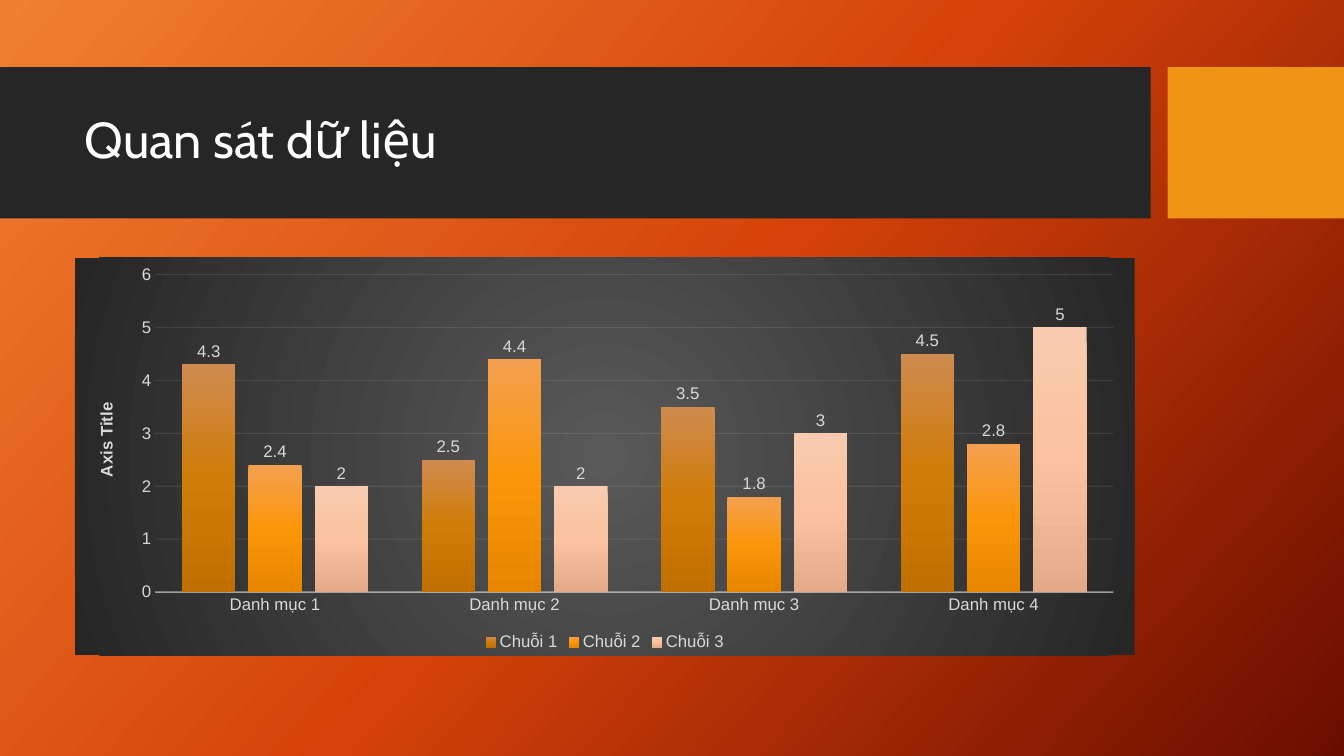
from lxml.etree import SubElement
from pptx import Presentation
from pptx.chart.data import CategoryChartData
from pptx.dml.color import RGBColor
from pptx.enum.chart import XL_CHART_TYPE as ChartType
from pptx.enum.chart import XL_LABEL_POSITION as LabelPosition
from pptx.enum.chart import XL_LEGEND_POSITION as LegendPosition
from pptx.enum.chart import XL_TICK_MARK as TickMark
from pptx.enum.shapes import MSO_SHAPE as Shape
from pptx.enum.text import MSO_ANCHOR as Anchor
from pptx.oxml import parse_xml
from pptx.oxml.ns import nsdecls, qn
from pptx.util import Pt

PAGE_WIDTH, PAGE_HEIGHT = 960, 540
LIGHT_GREY = "D9D9D9"
CATEGORIES = ["Danh mục 1", "Danh mục 2", "Danh mục 3", "Danh mục 4"]
SERIES = [
    ("Chuỗi 1", (4.3, 2.5, 3.5, 4.5), ("CE8B4F", "D07C08", "C07000")),
    ("Chuỗi 2", (2.4, 4.4, 1.8, 2.8), ("F4A050", "FB960A", "E88600")),
    ("Chuỗi 3", (2, 2, 3, 5), ("F8CBB0", "FAC29E", "E3AB87")),
]


def color(value):
    return RGBColor.from_string(value)


def gradient(colors, angle=None):
    step = 100000 // (len(colors) - 1)
    stops = "".join(
        f'<a:gs pos="{index * step}"><a:srgbClr val="{value}"/></a:gs>'
        for index, value in enumerate(colors)
    )
    if angle is None:
        shade = (
            '<a:path path="circle"><a:fillToRect l="50000" t="50000" '
            'r="50000" b="50000"/></a:path>'
        )
    else:
        shade = f'<a:lin ang="{angle * 60000}" scaled="0"/>'
    return parse_xml(
        f'<a:gradFill {nsdecls("a")} rotWithShape="1">'
        f"<a:gsLst>{stops}</a:gsLst>{shade}</a:gradFill>"
    )


def replace_fill(properties, fill):
    properties.replace(properties.find(qn("a:solidFill")), fill)


def style_font(font, size=12, name="Arial", fill=LIGHT_GREY, bold=False):
    font.size = Pt(size)
    font.name = name
    font.bold = bold
    font.color.rgb = color(fill)


def write_text(frame, text, line_spacing=None, **font_format):
    para = frame.paragraphs[0]
    if line_spacing:
        para.line_spacing = line_spacing
    span = para.add_run()
    span.text = text
    style_font(span.font, **font_format)


def style_line(line, width, opacity):
    line.width = Pt(width)
    line.color.rgb = color("F2F2F2")
    tint = line.fill._xPr.find(qn("a:solidFill"))[0]
    SubElement(tint, qn("a:alpha")).set("val", str(opacity * 1000))


def add_block(page, left, top, width, height, fill):
    block = page.shapes.add_shape(
        Shape.RECTANGLE, Pt(left), Pt(top), Pt(width), Pt(height)
    )
    block.shadow.inherit = False
    block.fill.solid()
    block.fill.fore_color.rgb = color(fill)
    block.line.fill.background()


def add_background(page):
    page.background.fill.solid()
    properties = page._element.xpath("p:cSld/p:bg/p:bgPr")[0]
    replace_fill(properties, gradient(("F18031", "D54209", "6A0D00"), 42))


def add_header(page, top, height):
    accent_width, gap = 126, 12
    band_width = PAGE_WIDTH - accent_width - gap
    add_block(page, 0, top, band_width, height, "262626")
    add_block(page, PAGE_WIDTH - accent_width, top, accent_width, height, "F09415")
    box = page.shapes.add_textbox(
        Pt(53.5), Pt(top + 11), Pt(757), Pt(height - 23)
    )
    frame = box.text_frame
    frame.word_wrap = True
    frame.vertical_anchor = Anchor.MIDDLE
    write_text(
        frame, "Quan sát dữ liệu", line_spacing=0.9,
        size=36, name="Cabin", fill="FFFFFF",
    )


def style_axes(chart):
    for axis in (chart.category_axis, chart.value_axis):
        axis.major_tick_mark = axis.minor_tick_mark = TickMark.NONE
        style_font(axis.tick_labels.font)
    chart.category_axis.has_major_gridlines = False
    style_line(chart.category_axis.format.line, 1, 54)

    values = chart.value_axis
    values.minimum_scale, values.maximum_scale, values.major_unit = 0, 6, 1
    values.format.line.fill.background()
    style_line(values.major_gridlines.format.line, 0.75, 10)
    title = values.axis_title
    write_text(title.text_frame, "Axis Title", bold=True)
    body = title._element.xpath(".//a:bodyPr")[0]
    body.set("rot", "-5400000")
    body.set("vert", "horz")


def add_column_chart(page, left, top, width, height):
    chart_data = CategoryChartData()
    chart_data.categories = CATEGORIES
    for name, values, _ in SERIES:
        chart_data.add_series(name, values)
    chart = page.shapes.add_chart(
        ChartType.COLUMN_CLUSTERED,
        Pt(left), Pt(top), Pt(width), Pt(height), chart_data,
    ).chart
    style_font(chart.font, size=10, fill="FFFFFF")
    chart.has_title = False
    chart.has_legend = True
    chart.legend.position = LegendPosition.BOTTOM
    chart.legend.include_in_layout = False
    style_font(chart.legend.font)
    style_axes(chart)

    plot = chart.plots[0]
    plot.gap_width, plot.overlap = 100, -24
    plot.vary_by_categories = False
    for series, (_, _, colors) in zip(plot.series, SERIES):
        series.format.fill.solid()
        replace_fill(series._element.find(qn("c:spPr")), gradient(colors, 90))
        labels = series.data_labels
        labels.show_value = True
        labels.position = LabelPosition.OUTSIDE_END
        style_font(labels.font)

    frame_style = parse_xml(
        f'<c:spPr {nsdecls("c", "a")}><a:ln><a:noFill/></a:ln></c:spPr>'
    )
    frame_style.insert(0, gradient(("595959", "262626")))
    chart._chartSpace.find(qn("c:chart")).addnext(frame_style)


def main():
    deck = Presentation()
    deck.slide_width, deck.slide_height = Pt(PAGE_WIDTH), Pt(PAGE_HEIGHT)
    page = deck.slides.add_slide(deck.slide_layouts[6])
    add_background(page)
    add_header(page, top=48, height=108)
    add_column_chart(page, left=53.5, top=184, width=757, height=284)
    deck.save("out.pptx")


if __name__ == "__main__":
    main()
